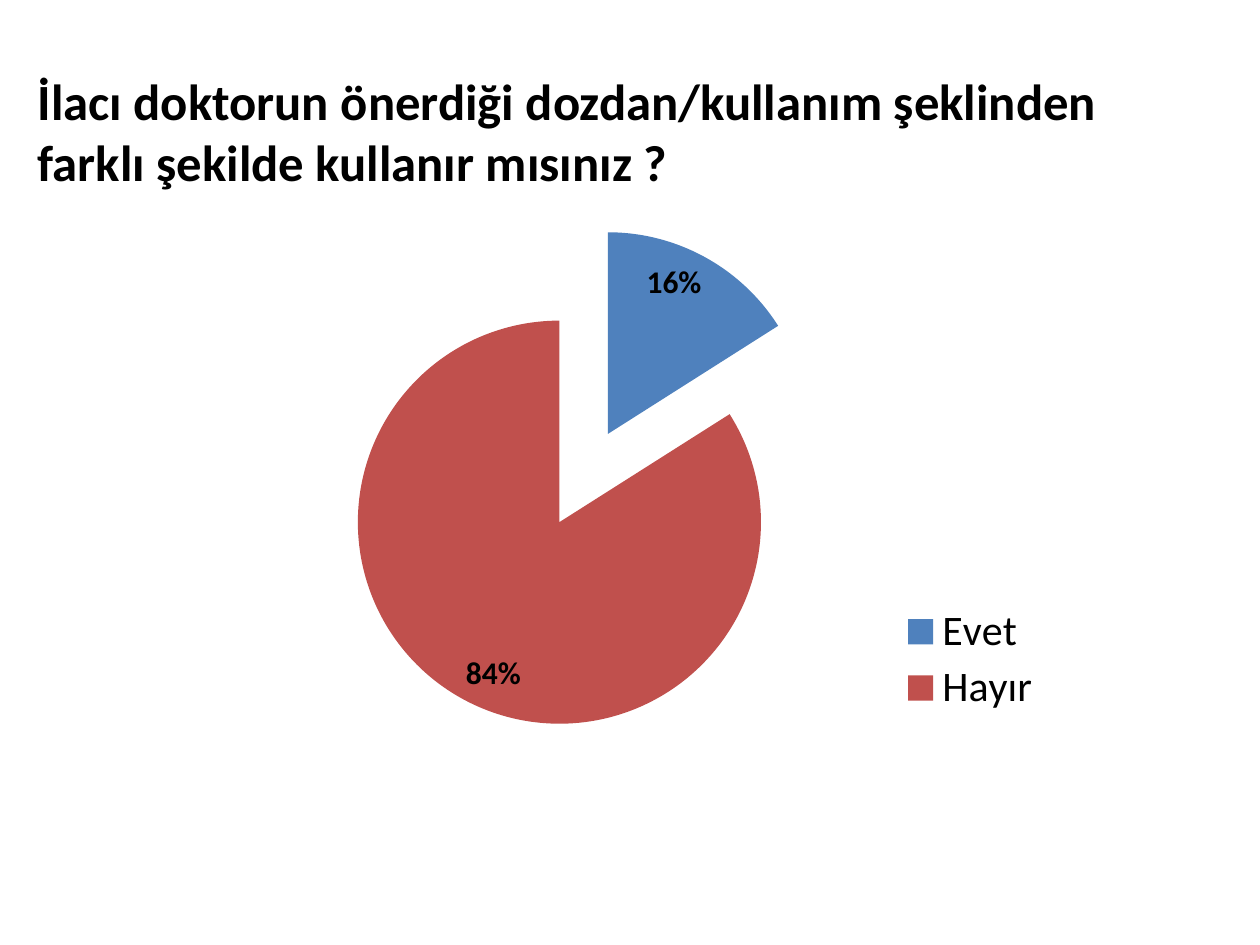
from lxml.etree import SubElement
from pptx import Presentation
from pptx.chart.data import CategoryChartData
from pptx.dml.color import RGBColor
from pptx.enum.chart import XL_CHART_TYPE, XL_LABEL_POSITION, XL_LEGEND_POSITION
from pptx.enum.text import MSO_ANCHOR
from pptx.oxml import parse_xml
from pptx.oxml.ns import nsdecls, qn
from pptx.util import Pt


def color(hex_value):
    return RGBColor.from_string(hex_value)


def format_font(font, name="Calibri", size=18, bold=False, fill="000000"):
    font.name = name
    font.size = Pt(size)
    font.bold = bold
    font.color.rgb = color(fill)


def write_text(paragraph, text, **font_format):
    run = paragraph.add_run()
    run.text = text
    format_font(run.font, **font_format)


def set_layout(parent, after, inner=False, **fractions):
    """Place a chart part by fractions of the chart's size."""
    for old in parent.findall(qn("c:layout")):
        parent.remove(old)
    layout = parse_xml(f"<c:layout {nsdecls('c')}><c:manualLayout/></c:layout>")
    settings = {"layoutTarget": "inner"} if inner else {}
    settings |= {"xMode": "edge", "yMode": "edge"} | fractions
    for tag, value in settings.items():
        SubElement(layout[0], qn(f"c:{tag}")).set("val", str(value))
    if after is None:
        parent.insert(0, layout)
    else:
        after.addnext(layout)


class SlideBuilder:
    point_colors = ("4F81BD", "C0504D")

    def __init__(self, slide):
        self.slide = slide

    def title(self, text, left, top, width, height):
        shape = self.slide.shapes.add_textbox(Pt(left), Pt(top), Pt(width), Pt(height))
        frame = shape.text_frame
        frame.word_wrap = True
        frame.vertical_anchor = MSO_ANCHOR.TOP
        frame.margin_top = Pt(8)
        write_text(frame.paragraphs[0], text, size=29, bold=True)

    def pie(self, categories, values, left, top, width, height):
        data = CategoryChartData(number_format="0%")
        data.categories = categories
        data.add_series("Series 1", values)
        chart = self.slide.shapes.add_chart(
            XL_CHART_TYPE.PIE, Pt(left), Pt(top), Pt(width), Pt(height), data
        ).chart
        chart.has_title = False
        format_font(chart.font)

        # Slices
        plot = chart.plots[0]
        plot.vary_by_categories = True
        series = plot.series[0]
        for index, fill in enumerate(self.point_colors):
            point_fill = series.points[index].format.fill
            point_fill.solid()
            point_fill.fore_color.rgb = color(fill)
        explosion = parse_xml(f'<c:explosion {nsdecls("c")} val="25"/>')
        series._element.find(qn("c:dPt")).addprevious(explosion)

        # Labels
        labels = series.data_labels
        labels.show_value = True
        labels.number_format = "0%"
        labels.number_format_is_linked = False
        labels.position = XL_LABEL_POSITION.INSIDE_END
        format_font(labels.font, bold=True)

        # Legend and plot area
        chart.has_legend = True
        legend = chart.legend
        legend.position = XL_LEGEND_POSITION.RIGHT
        legend.include_in_layout = False
        format_font(legend.font, size=24)
        legend_element = legend._element
        set_layout(legend_element, legend_element.find(qn("c:legendPos")),
                   x=0.81, y=0.73, w=0.19, h=0.21)
        plot_area = chart._chartSpace.chart.plotArea
        set_layout(plot_area, None, inner=True, x=0, y=0.06, w=0.89, h=0.9)


def main():
    presentation = Presentation()
    presentation.slide_width, presentation.slide_height = Pt(720), Pt(540)
    slide = presentation.slides.add_slide(presentation.slide_layouts[6])
    builder = SlideBuilder(slide)

    # Answers
    builder.pie(("Evet", "Hayır"), (0.16, 0.84), 120, 110, 480, 320)

    # Question
    builder.title(
        "İlacı doktorun önerdiği dozdan/kullanım şeklinden farklı şekilde kullanır mısınız ?",
        14.4, 31.7, 657.4, 108,
    )

    presentation.save("out.pptx")


if __name__ == "__main__":
    main()
